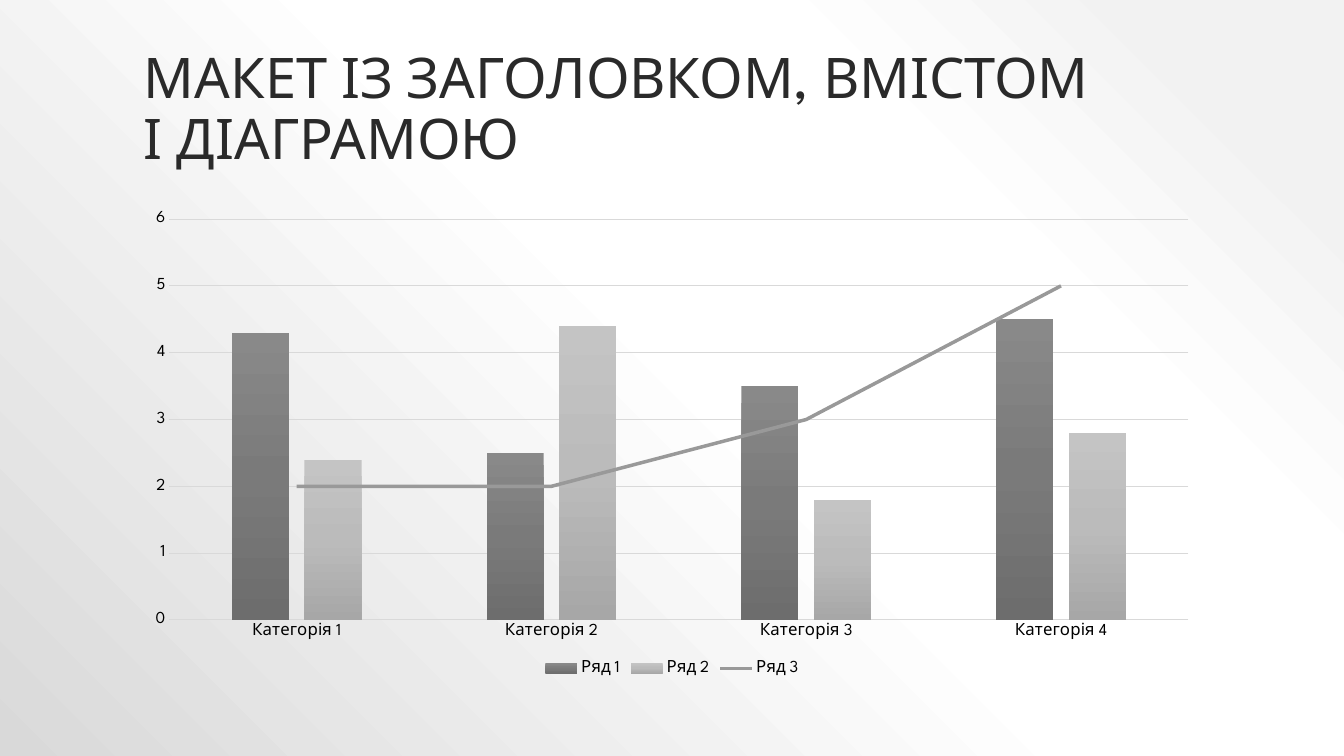
from dataclasses import dataclass

import lxml.etree
import pptx
import pptx.chart.chart
import pptx.chart.data
import pptx.dml.color
import pptx.enum.chart
import pptx.enum.text
import pptx.oxml
import pptx.oxml.ns
import pptx.slide
import pptx.util
from pptx.util import Inches

RGBColor = pptx.dml.color.RGBColor
qn = pptx.oxml.ns.qn

FONT = "League Spartan"
TITLE_COLOR = RGBColor(0x2A, 0x2A, 0x2A)
BLACK = RGBColor(0, 0, 0)
GRID_COLOR = RGBColor(0xD9, 0xD9, 0xD9)
TREND_COLOR = RGBColor(0x99, 0x99, 0x99)

LEFT, WIDTH = Inches(1.33), Inches(10.67)

Stops = tuple[tuple[int, RGBColor], ...]


@dataclass(frozen=True)
class Series:
    name: str
    values: tuple[float, ...]
    gradient: Stops = ()


CATEGORIES = [f"Категорія {number}" for number in range(1, 5)]
COLUMNS = (
    Series("Ряд 1", (4.3, 2.5, 3.5, 4.5), (
        (0, RGBColor(0x89, 0x89, 0x89)),
        (50, RGBColor(0x7A, 0x7A, 0x7A)),
        (100, RGBColor(0x6D, 0x6D, 0x6D)),
    )),
    Series("Ряд 2", (2.4, 4.4, 1.8, 2.8), (
        (0, RGBColor(0xC4, 0xC4, 0xC4)),
        (50, RGBColor(0xBB, 0xBB, 0xBB)),
        (100, RGBColor(0xA7, 0xA7, 0xA7)),
    )),
)
TREND = Series("Ряд 3", (2, 2, 3, 5))

BACKGROUND: Stops = (
    (10, RGBColor(0xF2, 0xF2, 0xF2)),
    (28, RGBColor(0xFF, 0xFF, 0xFF)),
    (48, RGBColor(0xFF, 0xFF, 0xFF)),
    (100, RGBColor(0xD9, 0xD9, 0xD9)),
)
DOWNWARD = '<a:lin ang="5400000" scaled="0"/>'
FROM_TOP_RIGHT = (
    '<a:path path="circle"><a:fillToRect l="100000" b="100000"/></a:path>'
    '<a:tileRect t="-100000" r="-100000"/>'
)


def set_gradient(parent: lxml.etree.ElementBase, stops: Stops, direction: str) -> None:
    """Replace the gradient fill found under parent."""
    stop_xml = "".join(
        f'<a:gs pos="{position * 1000}"><a:srgbClr val="{color}"/></a:gs>'
        for position, color in stops
    )
    gradient = pptx.oxml.parse_xml(
        f'<a:gradFill {pptx.oxml.ns.nsdecls("a")} rotWithShape="1">'
        f"<a:gsLst>{stop_xml}</a:gsLst>{direction}</a:gradFill>"
    )
    previous = next(parent.iter(qn("a:gradFill")))
    previous.getparent().replace(previous, gradient)


def add_title(slide: pptx.slide.Slide, text: str) -> None:
    frame = slide.shapes.add_textbox(LEFT, Inches(0.3), WIDTH, Inches(1.45)).text_frame
    frame.word_wrap = True
    frame.vertical_anchor = pptx.enum.text.MSO_ANCHOR.BOTTOM
    paragraph = frame.paragraphs[0]
    paragraph.text = text
    paragraph.line_spacing = 0.9
    paragraph.font.name = FONT
    paragraph.font.size = pptx.util.Pt(40)
    paragraph.font.color.rgb = TITLE_COLOR


def move_last_series_to_line(chart: pptx.chart.chart.Chart) -> None:
    """Draw the last column series as a line on the same axes."""
    bar_chart = next(chart.element.iter(qn("c:barChart")))
    series = bar_chart.findall(qn("c:ser"))[-1]
    for bar_setting in series.findall(qn("c:invertIfNegative")):
        series.remove(bar_setting)
    line_chart = pptx.oxml.parse_xml(
        f'<c:lineChart {pptx.oxml.ns.nsdecls("c")}><c:grouping val="standard"/>'
        '<c:varyColors val="0"/><c:marker val="1"/></c:lineChart>'
    )
    line_chart.insert(2, series)
    for axis_id in bar_chart.findall(qn("c:axId")):
        lxml.etree.SubElement(line_chart, qn("c:axId"), val=axis_id.get("val"))
    bar_chart.addnext(line_chart)


def add_combined_chart(slide: pptx.slide.Slide) -> None:
    data = pptx.chart.data.CategoryChartData()
    data.categories = CATEGORIES
    for series in (*COLUMNS, TREND):
        data.add_series(series.name, series.values)
    chart = slide.shapes.add_chart(
        pptx.enum.chart.XL_CHART_TYPE.COLUMN_CLUSTERED,
        LEFT, Inches(2), WIDTH, Inches(4.75), data,
    ).chart
    chart.has_title = False
    chart.font.name = FONT
    chart.font.size = pptx.util.Pt(12)
    chart.font.color.rgb = BLACK

    # Columns and line
    move_last_series_to_line(chart)
    column_plot, line_plot = chart.plots
    column_plot.gap_width = 219
    column_plot.overlap = -27
    column_plot.vary_by_categories = False
    column_elements = chart.element.iter(qn("c:ser"))
    for column, element, series in zip(column_plot.series, column_elements, COLUMNS):
        column.invert_if_negative = False
        column.format.fill.gradient()
        set_gradient(element, series.gradient, DOWNWARD)
    trend = line_plot.series[0]
    trend.smooth = False
    trend.marker.style = pptx.enum.chart.XL_MARKER_STYLE.NONE
    trend.format.line.color.rgb = TREND_COLOR
    trend.format.line.width = pptx.util.Pt(2.5)

    # Axes and grid
    category_axis, value_axis = chart.category_axis, chart.value_axis
    for axis in (category_axis, value_axis):
        axis.major_tick_mark = pptx.enum.chart.XL_TICK_MARK.NONE
        axis.minor_tick_mark = pptx.enum.chart.XL_TICK_MARK.NONE
    value_axis.minimum_scale, value_axis.maximum_scale = 0, 6
    value_axis.major_unit = 1
    value_axis.has_major_gridlines = True
    value_axis.format.line.fill.background()
    for line in (category_axis.format.line, value_axis.major_gridlines.format.line):
        line.color.rgb = GRID_COLOR
        line.width = pptx.util.Pt(0.75)

    # Legend
    chart.has_legend = True
    chart.legend.position = pptx.enum.chart.XL_LEGEND_POSITION.BOTTOM
    chart.legend.include_in_layout = False


def main() -> None:
    presentation = pptx.Presentation()
    presentation.slide_width = Inches(13.33)
    presentation.slide_height = Inches(7.5)
    slide = presentation.slides.add_slide(presentation.slide_layouts[6])
    slide.background.fill.gradient()
    set_gradient(slide.element, BACKGROUND, FROM_TOP_RIGHT)
    add_title(slide, "МАКЕТ ІЗ ЗАГОЛОВКОМ, ВМІСТОМ \vІ ДІАГРАМОЮ")
    add_combined_chart(slide)
    presentation.save("out.pptx")


if __name__ == "__main__":
    main()
